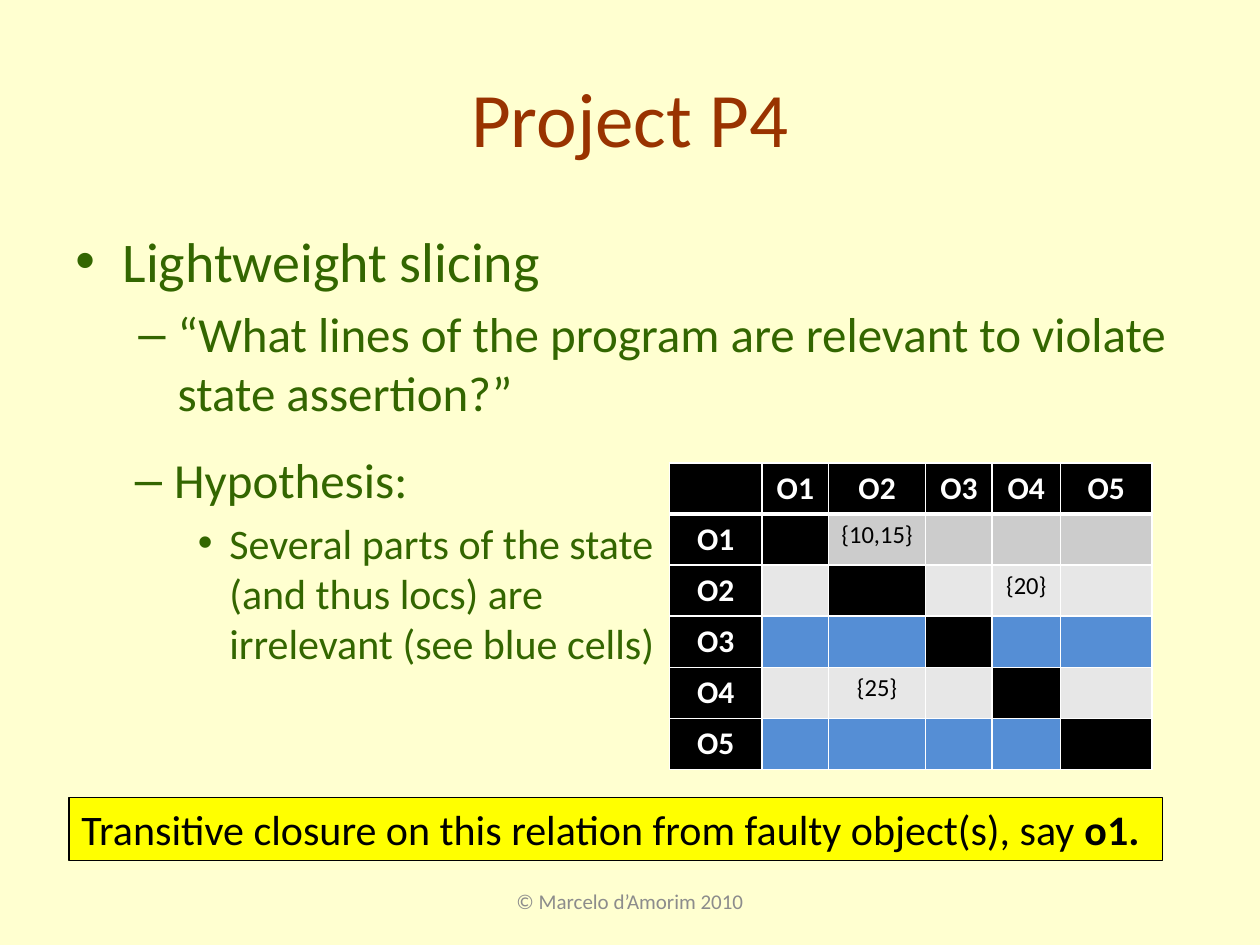
from typing import NamedTuple

from lxml import etree
from pptx import Presentation
from pptx.dml.color import RGBColor
from pptx.enum.shapes import MSO_SHAPE
from pptx.enum.text import MSO_ANCHOR, MSO_AUTO_SIZE, PP_ALIGN
from pptx.oxml.ns import qn
from pptx.util import Pt

RECT = MSO_SHAPE.RECTANGLE
MID, TOP = MSO_ANCHOR.MIDDLE, MSO_ANCHOR.TOP
GROW = MSO_AUTO_SIZE.SHAPE_TO_FIT_TEXT
LEFT, MIDST = PP_ALIGN.LEFT, PP_ALIGN.CENTER
FONT = "Calibri"
PAPER, RUST, GREEN, GRAY = "FFFFD0", "993300", "336600", "8C8C8C"
BLACK, WHITE, YELLOW, BLUE = "000000", "FFFFFF", "FFFF00", "558ED5"
DARK, LIGHT = "CCCCCC", "E7E7E7"


class Box(NamedTuple):
    left: float
    top: float
    width: float
    height: float

    def pts(self) -> list:
        return [Pt(n) for n in self]


class Run(NamedTuple):
    text: str
    size: float
    color: str
    bold: bool = False


class Level(NamedTuple):
    mark: str
    left: float
    hang: float
    size: float


class Item(NamedTuple):
    level: int
    text: str


LEVELS = [
    Level("•", 27, 27, 32),
    Level("–", 58.5, 22.5, 28),
    Level("•", 90, 18, 24),
]
TOPICS = [
    Item(0, "Lightweight slicing"),
    Item(1, "“What lines of the program are relevant to violate state assertion?”"),
]
CLAIMS = [
    Item(1, "Hypothesis:"),
    Item(2, "Several parts of the state (and thus locs) are irrelevant (see blue cells)"),
]
NAMES = ["O1", "O2", "O3", "O4", "O5"]
WIDTHS = [53, 38, 55.5, 38, 39, 52.5]
ROW = 29.2
FILLS = [DARK, LIGHT, BLUE, LIGHT, BLUE]
LINES = {(1, 2): "{10,15}", (2, 4): "{20}", (4, 2): "{25}"}


def rgb(code: str) -> RGBColor:
    return RGBColor.from_string(code)


def paint(target, code: str) -> None:
    target.fill.solid()
    target.fill.fore_color.rgb = rgb(code)


def write(para, runs: list[Run], align=LEFT) -> None:
    para.alignment = align
    for item in runs:
        run = para.add_run()
        run.text = item.text
        font = run.font
        font.name, font.size, font.bold = FONT, Pt(item.size), item.bold
        font.color.rgb = rgb(item.color)


def add_text(slide, box: Box, anchor=TOP):
    frame = slide.shapes.add_textbox(*box.pts()).text_frame
    frame.word_wrap = True
    frame.vertical_anchor = anchor
    return frame


def add_label(slide, box: Box, run: Run) -> None:
    write(add_text(slide, box, MID).paragraphs[0], [run], MIDST)


def add_list(slide, box: Box, items: list[Item]) -> None:
    frame = add_text(slide, box)
    for i, item in enumerate(items):
        level = LEVELS[item.level]
        para = frame.add_paragraph() if i else frame.paragraphs[0]
        para.level = item.level
        if i:
            para.space_before = Pt(level.size * 0.2)
        props = para._p.get_or_add_pPr()
        props.set("marL", str(Pt(level.left)))
        props.set("indent", str(-Pt(level.hang)))
        etree.SubElement(props, qn("a:buFont"), typeface="Arial")
        etree.SubElement(props, qn("a:buChar"), char=level.mark)
        write(para, [Run(item.text, level.size, GREEN)])


def edge(cell, row: int) -> None:
    props = cell._tc.get_or_add_tcPr()
    thick = {(0, "B"), (1, "T")}
    for side in "LRTB":
        width = Pt(3 if (row, side) in thick else 1)
        line = etree.SubElement(props, qn(f"a:ln{side}"), w=str(width))
        fill = etree.SubElement(line, qn("a:solidFill"))
        etree.SubElement(fill, qn("a:srgbClr"), val=WHITE)


def add_grid(slide, left: float, top: float) -> None:
    size = len(NAMES) + 1
    box = Box(left, top, sum(WIDTHS), ROW * size)
    table = slide.shapes.add_table(size, size, *box.pts()).table
    for col, width in zip(table.columns, WIDTHS):
        col.width = Pt(width)
    for r in range(size):
        table.rows[r].height = Pt(ROW)
        for c in range(size):
            cell = table.cell(r, c)
            head = r == 0 or c == 0
            edge(cell, r)
            paint(cell, BLACK if head or r == c else FILLS[r - 1])
            para = cell.text_frame.paragraphs[0]
            if head and r != c:
                write(para, [Run(NAMES[max(r, c) - 1], 18, WHITE, True)], MIDST)
            elif (r, c) in LINES:
                write(para, [Run(LINES[r, c], 14, BLACK)], MIDST)


def add_note(slide, box: Box, runs: list[Run]) -> None:
    shape = slide.shapes.add_shape(RECT, *box.pts())
    shape.shadow.inherit = False
    paint(shape, YELLOW)
    shape.line.color.rgb = rgb(BLACK)
    shape.line.width = Pt(0.75)
    frame = shape.text_frame
    frame.word_wrap = False
    frame.auto_size = GROW
    frame.vertical_anchor = TOP
    write(frame.paragraphs[0], runs)


def main() -> None:
    deck = Presentation()
    deck.slide_width, deck.slide_height = Pt(720), Pt(540)
    slide = deck.slides.add_slide(deck.slide_layouts[6])
    paint(slide.background, PAPER)
    add_label(slide, Box(36, 21.6, 648, 90), Run("Project P4", 44, RUST))
    add_list(slide, Box(36, 126, 648, 132.5), TOPICS)
    add_label(slide, Box(246, 500.5, 228, 28.8),
              Run("© Marcelo d’Amorim 2010", 12, GRAY))
    add_grid(slide, 382.5, 264.5)
    add_list(slide, Box(34, 253.5, 360, 229), CLAIMS)
    add_note(slide, Box(39.4, 455.6, 625, 36.3), [
        Run("Transitive closure on this relation from faulty object(s), say ", 24, BLACK),
        Run("o1.", 24, BLACK, True),
    ])
    deck.save("out.pptx")


if __name__ == "__main__":
    main()
